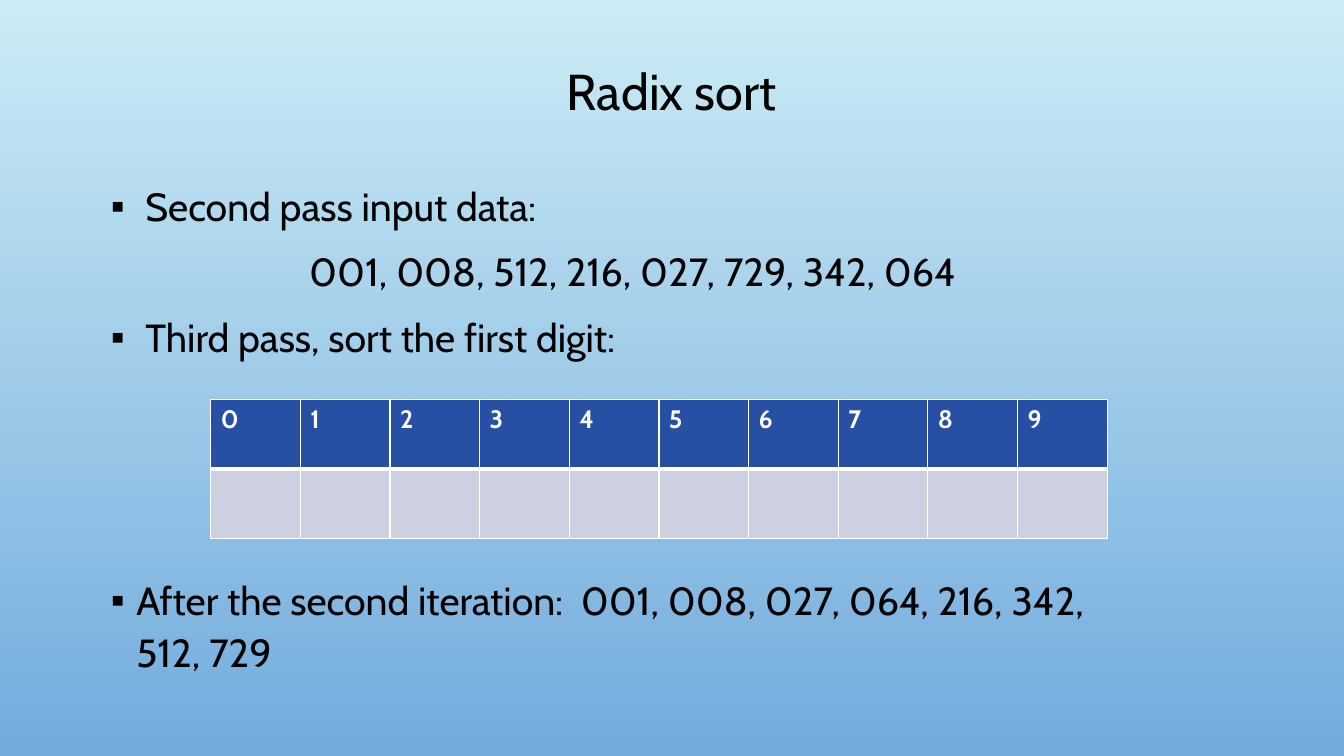
from dataclasses import dataclass

import lxml.etree
import pptx
import pptx.dml.color
import pptx.enum.text
import pptx.oxml.ns
import pptx.util

Cm = pptx.util.Cm
Pt = pptx.util.Pt
qn = pptx.oxml.ns.qn
ALIGN = pptx.enum.text.PP_ALIGN
ANCHOR = pptx.enum.text.MSO_ANCHOR
FONT = "Cabin"
BLACK = "000000"
WHITE = "FFFFFF"


@dataclass
class Line:
    text: str
    indent: float = 0.64
    space_before: float = 10
    bullet: bool = True


@dataclass
class Row:
    labels: list[str]
    fill: str
    top_border: float
    bottom_border: float


LINES = [
    Line("Second pass input data:", indent=0.87, space_before=0),
    Line("001, 008, 512, 216, 027, 729, 342, 064", indent=0, bullet=False),
    Line("Third pass, sort the first digit:", indent=0.87),
    Line("After the second iteration:  001, 008, 027, 064, 216, 342, 512, 729",
         space_before=151),
]
DIGITS = [str(digit) for digit in range(10)]
ROWS = [
    Row(DIGITS, "274FA4", top_border=1, bottom_border=3),
    Row([""] * len(DIGITS), "CDD0E0", top_border=3, bottom_border=1),
]


def colour(code: str) -> pptx.dml.color.RGBColor:
    return pptx.dml.color.RGBColor.from_string(code)


def format_runs(paragraph, size: float, code: str, bold: bool = False) -> None:
    for run in paragraph.runs:
        run.font.name = FONT
        run.font.size = Pt(size)
        run.font.bold = bold
        run.font.color.rgb = colour(code)


def place(holder, left: float, top: float, width: float, height: float) -> None:
    holder.left, holder.top = Cm(left), Cm(top)
    holder.width, holder.height = Cm(width), Cm(height)
    holder.text_frame.word_wrap = True
    holder.text_frame.auto_size = pptx.enum.text.MSO_AUTO_SIZE.NONE


def set_bullet(paragraph, line: Line) -> None:
    properties = paragraph._p.get_or_add_pPr()
    properties.set("marL", str(Cm(line.indent)))
    properties.set("indent", str(-Cm(line.indent)))
    if line.bullet:
        tint = lxml.etree.SubElement(properties, qn("a:buClr"))
        lxml.etree.SubElement(tint, qn("a:srgbClr"), val=BLACK)
        lxml.etree.SubElement(properties, qn("a:buFont"), typeface="Arial")
        lxml.etree.SubElement(properties, qn("a:buChar"), char="▪")
    else:
        lxml.etree.SubElement(properties, qn("a:buNone"))


def write_line(paragraph, line: Line) -> None:
    paragraph.text = line.text
    set_bullet(paragraph, line)
    paragraph.alignment = ALIGN.LEFT if line.bullet else ALIGN.CENTER
    paragraph.line_spacing = 1.1
    paragraph.space_before = Pt(line.space_before)
    format_runs(paragraph, 28, BLACK)


def set_borders(cell, row: Row) -> None:
    widths = {"a:lnL": 1, "a:lnR": 1, "a:lnT": row.top_border, "a:lnB": row.bottom_border}
    properties = cell._tc.get_or_add_tcPr()
    for tag, width in widths.items():
        border = lxml.etree.SubElement(properties, qn(tag), w=str(Pt(width)))
        solid = lxml.etree.SubElement(border, qn("a:solidFill"))
        lxml.etree.SubElement(solid, qn("a:srgbClr"), val=WHITE)


def add_buckets(slide) -> None:
    column_width, row_height = 2.26, 1.75
    buckets = slide.shapes.add_table(
        len(ROWS), len(DIGITS), Cm(5.31), Cm(10.06),
        Cm(column_width * len(DIGITS)), Cm(row_height * len(ROWS))).table
    for column in buckets.columns:
        column.width = Cm(column_width)
    for row_index, row in enumerate(ROWS):
        buckets.rows[row_index].height = Cm(row_height)
        for column_index, label in enumerate(row.labels):
            cell = buckets.cell(row_index, column_index)
            set_borders(cell, row)
            cell.fill.solid()
            cell.fill.fore_color.rgb = colour(row.fill)
            cell.text_frame.text = label
            format_runs(cell.text_frame.paragraphs[0], 18, WHITE, bold=True)


def paint_sky(slide) -> None:
    sky = slide.background.fill
    sky.gradient()
    sky.gradient_angle = 270
    for stop, position, code in zip(sky.gradient_stops, (0, 1), ("CBECF5", "73ABDD")):
        stop.position = position
        stop.color.rgb = colour(code)


def main() -> None:
    deck = pptx.Presentation()
    deck.slide_width, deck.slide_height = Cm(33.87), Cm(19.05)
    slide = deck.slides.add_slide(deck.slide_layouts[1])
    paint_sky(slide)

    heading = slide.shapes.title
    place(heading, 2.54, 0.81, 28.78, 3.12)
    heading.text_frame.vertical_anchor = ANCHOR.MIDDLE
    heading.text_frame.text = "Radix sort"
    heading_line = heading.text_frame.paragraphs[0]
    heading_line.alignment = ALIGN.CENTER
    heading_line.line_spacing = 0.9
    format_runs(heading_line, 36, BLACK)

    passes = slide.placeholders[1]
    place(passes, 2.54, 4.34, 26.8, 13)
    passes.text_frame.vertical_anchor = ANCHOR.TOP
    passes.text_frame.text = "\n".join(line.text for line in LINES)
    for paragraph, line in zip(passes.text_frame.paragraphs, LINES):
        write_line(paragraph, line)

    add_buckets(slide)
    deck.save("out.pptx")


if __name__ == "__main__":
    main()
